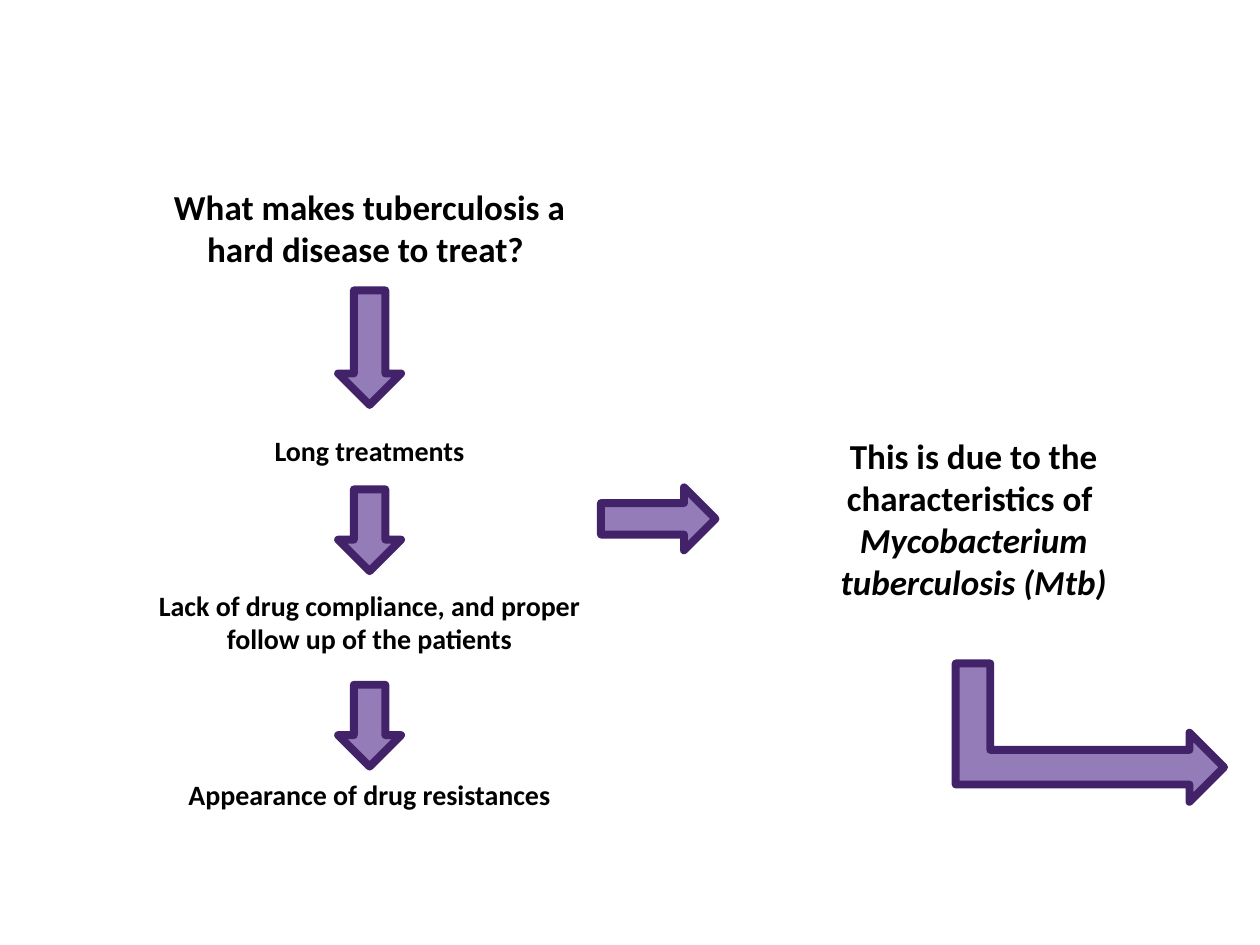
from typing import NamedTuple

from pptx import Presentation
from pptx.dml.color import RGBColor
from pptx.enum.shapes import MSO_SHAPE
from pptx.enum.text import MSO_ANCHOR, MSO_AUTO_SIZE, PP_ALIGN
from pptx.util import Cm, Pt

RIGHT, BENT = MSO_SHAPE.RIGHT_ARROW, MSO_SHAPE.BENT_UP_ARROW
TOP, CENTER = MSO_ANCHOR.TOP, PP_ALIGN.CENTER
GROW = MSO_AUTO_SIZE.SHAPE_TO_FIT_TEXT
COLORS = {"text": "000000", "fill": "947CB8", "edge": "422369"}
MID = 7.45  # centre line of the left column, cm


class Line(NamedTuple):
    text: str
    italic: bool = False


class Label(NamedTuple):
    mid: float
    top: float
    width: float
    height: float
    size: int
    lines: tuple[Line, ...]


class Arrow(NamedTuple):
    """An arrow by its centre and its size before turning, in cm."""
    mid: float
    center: float
    width: float
    height: float
    turn: int = 90
    kind: MSO_SHAPE = RIGHT


TITLE = Label(MID, 3.61, 9.73, 1.96, 20, (
    Line("What makes tuberculosis a hard disease to treat? "),))
LABELS = [
    Label(MID, 8.61, 11.96, 0.94, 16, (Line("Long treatments"),)),
    Label(MID, 11.73, 10.13, 1.63, 16, (
        Line("Lack of drug compliance, and proper follow up of the patients"),)),
    Label(MID, 15.54, 11.96, 0.94, 16, (
        Line("Appearance of drug resistances"),)),
    Label(19.63, 8.64, 8.59, 3.68, 20, (
        Line("This is due to the characteristics of "),
        Line("Mycobacterium tuberculosis (Mtb)", True))),
]
ARROWS = [
    Arrow(MID, 7.01, 2.31, 1.27),
    Arrow(MID, 10.69, 1.65, 1.27),
    Arrow(MID, 14.63, 1.65, 1.27),
    Arrow(13.27, 10.46, 2.31, 1.27, 0),
    Arrow(21.97, 14.77, 2.79, 5.41, 90, BENT),
]


def rgb(name: str) -> RGBColor:
    return RGBColor.from_string(COLORS[name])


def write(box, label: Label) -> None:
    """Place a text shape and fill it with the label's lines."""
    spot = {"left": Cm(label.mid - label.width / 2), "top": Cm(label.top),
            "width": Cm(label.width), "height": Cm(label.height)}
    for key, value in spot.items():
        setattr(box, key, value)
    frame = box.text_frame
    setup = {"word_wrap": True, "auto_size": GROW, "vertical_anchor": TOP}
    for key, value in setup.items():
        setattr(frame, key, value)
    for i, line in enumerate(label.lines):
        para = frame.add_paragraph() if i else frame.paragraphs[0]
        para.alignment = CENTER
        run = para.add_run()
        run.text = line.text
        style = {"name": "Calibri", "size": Pt(label.size),
                 "bold": True, "italic": line.italic}
        for key, value in style.items():
            setattr(run.font, key, value)
        run.font.color.rgb = rgb("text")


def draw(slide, arrow: Arrow) -> None:
    shape = slide.shapes.add_shape(
        arrow.kind, Cm(arrow.mid - arrow.width / 2),
        Cm(arrow.center - arrow.height / 2), Cm(arrow.width), Cm(arrow.height))
    shape.rotation = arrow.turn
    shape.shadow.inherit = False
    shape.fill.solid()
    shape.fill.fore_color.rgb = rgb("fill")
    shape.line.color.rgb = rgb("edge")
    shape.line.width = Pt(4.5)


def main() -> None:
    deck = Presentation()
    deck.slide_width, deck.slide_height = Cm(25.4), Cm(19.05)
    slide = deck.slides.add_slide(deck.slide_layouts[5])
    write(slide.shapes.title, TITLE)
    for label in LABELS:
        write(slide.shapes.add_textbox(0, 0, 0, 0), label)
    for arrow in ARROWS:
        draw(slide, arrow)
    deck.save("out.pptx")


if __name__ == "__main__":
    main()
